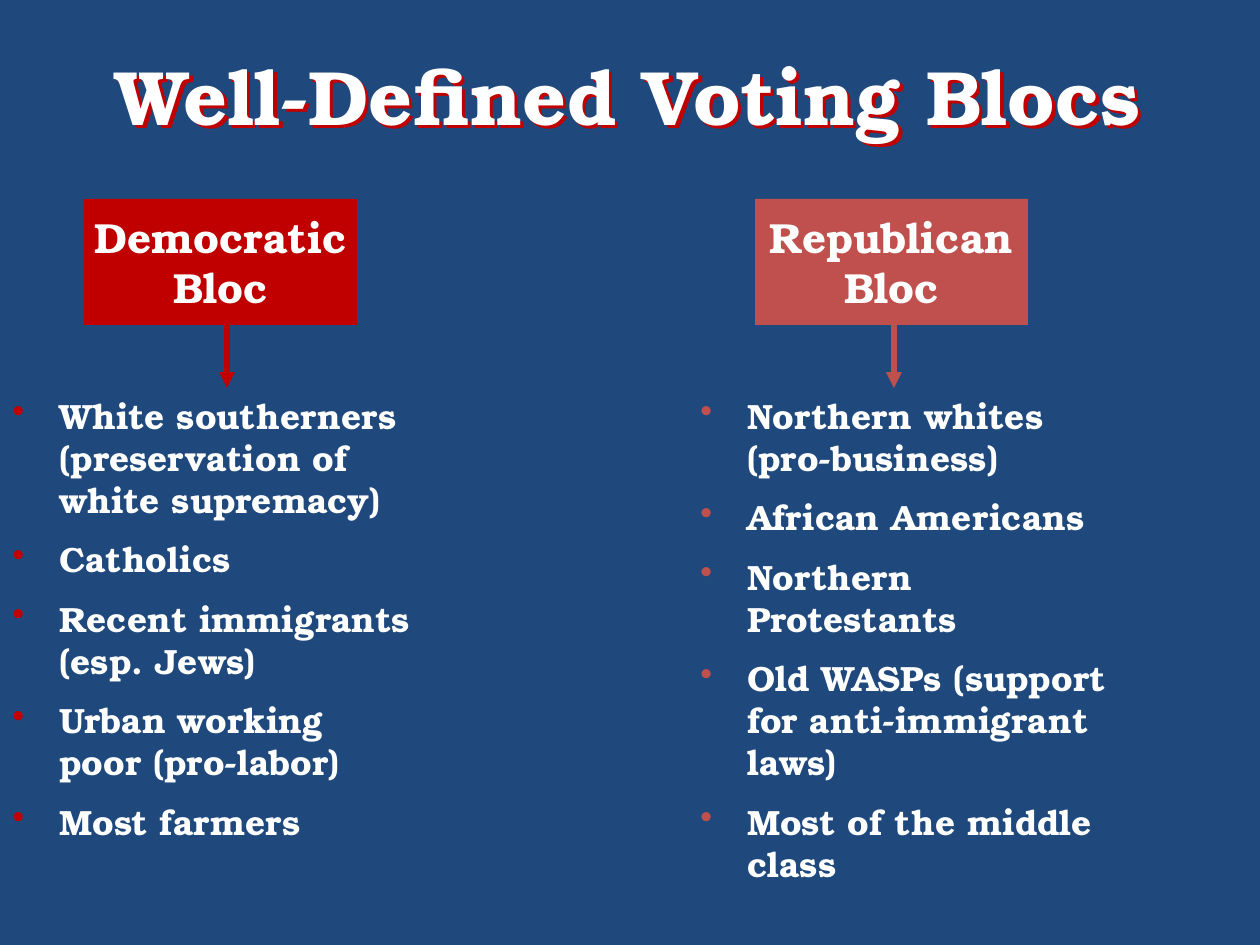
from collections import namedtuple
from dataclasses import dataclass

from lxml import etree
from pptx import Presentation
from pptx.dml.color import RGBColor
from pptx.enum import shapes, text
from pptx.oxml import ns
from pptx.util import Emu, Pt

PX_PER_INCH = 126
Box = namedtuple("Box", "left top width height")


@dataclass(frozen=True)
class Theme:
    font: str = "TeX Gyre Bonum"
    background: str = "1F497D"
    ink: str = "FFFFFF"
    democratic: str = "C00000"
    republican: str = "C0504D"
    title_size: int = 44
    header_size: int = 24
    list_size: int = 20


THEME = Theme()


def px(value):
    return Emu(round(value * 914400 / PX_PER_INCH))


def add_element(parent, tag, **attributes):
    return etree.SubElement(parent, ns.qn(tag), attributes)


def add_text(paragraph, lines, size):
    """Add one run for each line, with line breaks between them."""
    for index, line in enumerate(lines.split("\n")):
        if index:
            paragraph.add_line_break()
        run = paragraph.add_run()
        run.text = line
        run.font.name = THEME.font
        run.font.size = Pt(size)
        run.font.bold = True
        run.font.color.rgb = RGBColor.from_string(THEME.ink)


def add_textbox(slide, box):
    shape = slide.shapes.add_textbox(*map(px, box))
    shape.text_frame.word_wrap = True
    return shape


def add_title(slide, box, title):
    shape = add_textbox(slide, box)
    paragraph = shape.text_frame.paragraphs[0]
    paragraph.alignment = text.PP_ALIGN.CENTER
    add_text(paragraph, title, THEME.title_size)
    # Hard red shadow, down and to the right
    effects = add_element(shape.element.spPr, "a:effectLst")
    shadow = add_element(effects, "a:outerShdw", dist="35921", dir="2700000",
                         algn="ctr", rotWithShape="0")
    add_element(shadow, "a:srgbClr", val=THEME.democratic)


def add_header(slide, box, label, color):
    shape = slide.shapes.add_shape(shapes.MSO_SHAPE.RECTANGLE, *map(px, box))
    shape.shadow.inherit = False
    shape.fill.solid()
    shape.fill.fore_color.rgb = RGBColor.from_string(color)
    shape.line.fill.background()
    frame = shape.text_frame
    frame.word_wrap = False
    frame.vertical_anchor = text.MSO_ANCHOR.MIDDLE
    paragraph = frame.paragraphs[0]
    paragraph.alignment = text.PP_ALIGN.CENTER
    add_text(paragraph, label, THEME.header_size)


def add_arrow(slide, x, top, bottom, color):
    arrow = slide.shapes.add_connector(
        shapes.MSO_CONNECTOR.STRAIGHT, px(x), px(top), px(x), px(bottom))
    arrow.line.color.rgb = RGBColor.from_string(color)
    arrow.line.width = Pt(3)
    add_element(arrow.line._get_or_add_ln(), "a:tailEnd", type="triangle")
    add_element(arrow.element.spPr, "a:effectLst")


def add_bullets(slide, box, items, color):
    frame = add_textbox(slide, box).text_frame
    for index, item in enumerate(items):
        paragraph = frame.add_paragraph() if index else frame.paragraphs[0]
        properties = paragraph._p.get_or_add_pPr()
        properties.set("marL", str(px(47)))
        properties.set("indent", str(-px(47)))
        if index:
            paragraph.space_before = Pt(THEME.list_size / 2)
        bullet_color = add_element(properties, "a:buClr")
        add_element(bullet_color, "a:srgbClr", val=color)
        add_element(properties, "a:buChar", char="•")
        add_text(paragraph, item, THEME.list_size)


def add_bloc(slide, box, header_x, arrow_x, label, items, color):
    """A header with an arrow down to its list; x values are from the left."""
    header = Box(box.left + header_x, box.top, 273, 126)
    header_bottom = header.top + header.height
    list_top = header_bottom + 63
    add_header(slide, header, label, color)
    add_arrow(slide, box.left + arrow_x, header_bottom, list_top, color)
    list_height = box.top + box.height - list_top
    add_bullets(slide, Box(box.left, list_top, box.width, list_height),
                items, color)


def main():
    presentation = Presentation()
    presentation.slide_width, presentation.slide_height = px(1260), px(945)
    slide = presentation.slides.add_slide(presentation.slide_layouts[6])
    slide.background.fill.solid()
    slide.background.fill.fore_color.rgb = RGBColor.from_string(THEME.background)

    # Title
    add_title(slide, Box(28, 42, 1201, 105), "Well-Defined Voting Blocs")

    # Left bloc
    add_bloc(slide, Box(0, 199, 588, 668), 84, 227, "Democratic\nBloc", [
        "White southerners\n(preservation of\nwhite supremacy)",
        "Catholics",
        "Recent immigrants\n(esp. Jews)",
        "Urban working\npoor (pro-labor)",
        "Most farmers",
    ], THEME.democratic)

    # Right bloc
    add_bloc(slide, Box(688, 199, 530, 706), 67, 206, "Republican\nBloc", [
        "Northern whites\n(pro-business)",
        "African Americans",
        "Northern\nProtestants",
        "Old WASPs (support\nfor anti-immigrant\nlaws)",
        "Most of the middle\nclass",
    ], THEME.republican)

    presentation.save("out.pptx")


if __name__ == "__main__":
    main()
